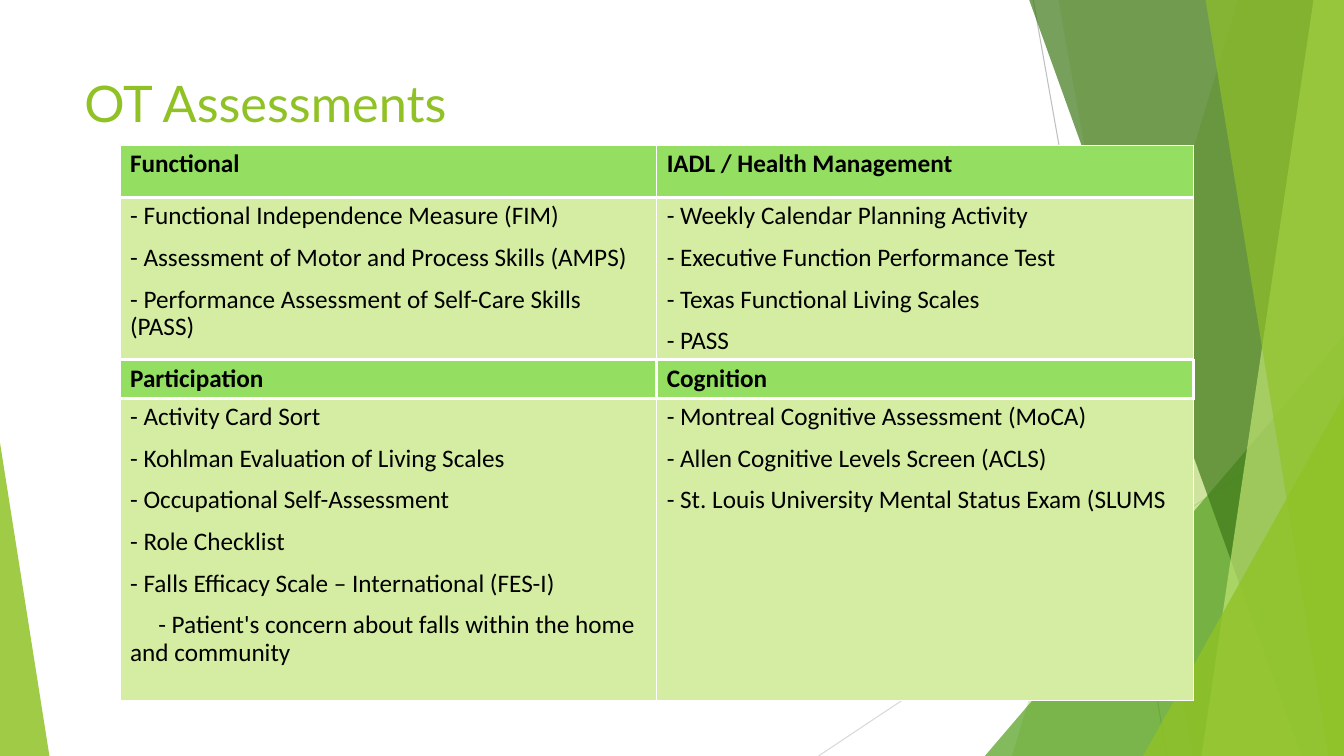
from dataclasses import dataclass

from lxml import etree
from pptx import Presentation
from pptx import util as u
from pptx.dml.color import RGBColor
from pptx.enum import shapes, text
from pptx.oxml import ns

LIME, GREEN, FOREST, PALE = "90C226", "54A021", "3F7819", "C0E474"
HEADING_FILL, LIST_FILL = "94DE61", "D5EDA2"
WHITE, BLACK = "FFFFFF", "000000"

deck = Presentation()
deck.slide_width, deck.slide_height = u.Inches(13.33), u.Inches(7.5)
page = deck.slides.add_slide(deck.slide_layouts[6])


@dataclass
class Ray:
    start: tuple[float, float]
    end: tuple[float, float]
    color: str


@dataclass
class Shard:
    """Full-height band from a slanted left edge to the right side."""
    top: float
    bottom: float
    color: str
    opacity: int


@dataclass
class Wedge:
    left: float
    top: float
    width: float
    peak: int
    color: str
    opacity: int


@dataclass
class Band:
    """Table row; borders run left, right, top, bottom in points."""
    height: float
    fill: str
    bold: bool
    borders: tuple[float, float, float, float]
    cells: tuple[list[str], list[str]]


# Lengths are percentages of the slide's width and height
def across(share: float) -> int:
    return round(deck.slide_width * share / 100)


def down(share: float) -> int:
    return round(deck.slide_height * share / 100)


def color_of(value: str) -> RGBColor:
    return RGBColor.from_string(value)


def paint(shape, color: str, opacity: int) -> None:
    shape.shadow.inherit = False
    shape.line.fill.background()
    shape.fill.solid()
    shape.fill.fore_color.rgb = color_of(color)
    tint = shape.fill._xPr.find(".//" + ns.qn("a:srgbClr"))
    etree.SubElement(tint, ns.qn("a:alpha"), val=str(opacity * 1000))


def draw_ray(ray: Ray) -> None:
    line = page.shapes.add_connector(
        shapes.MSO_CONNECTOR.STRAIGHT, across(ray.start[0]), down(ray.start[1]),
        across(ray.end[0]), down(ray.end[1]))
    line.line.color.rgb = color_of(ray.color)
    line.line.width = u.Pt(0.75)
    etree.SubElement(line._element.spPr, ns.qn("a:effectLst"))


def draw_shard(shard: Shard) -> None:
    outline = page.shapes.build_freeform(across(shard.top), 0)
    outline.add_line_segments([
        (across(100), 0), (across(100), down(100)), (across(shard.bottom), down(100))])
    paint(outline.convert_to_shape(), shard.color, shard.opacity)


def draw_wedge(wedge: Wedge) -> None:
    triangle = page.shapes.add_shape(
        shapes.MSO_SHAPE.ISOSCELES_TRIANGLE, across(wedge.left), down(wedge.top),
        across(wedge.width), down(100 - wedge.top))
    triangle.adjustments[0] = wedge.peak
    paint(triangle, wedge.color, wedge.opacity)


def draw_border(cell, side: str, width: float) -> None:
    edge = etree.SubElement(cell._tc.get_or_add_tcPr(), ns.qn("a:ln" + side),
                            w=str(u.Pt(width)))
    fill = etree.SubElement(edge, ns.qn("a:solidFill"))
    etree.SubElement(fill, ns.qn("a:srgbClr"), val=WHITE)


def style(para, font: str, size: int, color: str, bold: bool = False) -> None:
    for span in para.runs:
        span.font.name, span.font.size, span.font.bold = font, u.Pt(size), bold
        span.font.color.rgb = color_of(color)


def fill_cell(cell, lines: list[str], band: Band) -> None:
    for side, width in zip("LRTB", band.borders):
        draw_border(cell, side, width)
    cell.fill.solid()
    cell.fill.fore_color.rgb = color_of(band.fill)
    cell.text_frame.text = "\n".join(lines)
    for para in cell.text_frame.paragraphs:
        para.line_spacing, para.space_before = 0.9, u.Pt(10)
        style(para, "Calibri", 18, BLACK, band.bold)


# Background facets, back to front
FACETS = [
    Ray((76.88, 0), (86.85, 100), "BFBFBF"),
    Ray((100, 53.73), (60.9, 100), "D9D9D9"),
    Shard(92.1, 75.3, LIME, 30),
    Shard(78.75, 88.73, LIME, 20),
    Wedge(73.28, 44.4, 26.72, 1, GREEN, 72),
    Shard(76.58, 96.83, FOREST, 70),
    Shard(97.73, 89.4, PALE, 70),
    Shard(89.7, 98.85, LIME, 65),
    Wedge(85.05, 52.4, 14.95, 1, LIME, 80),
    Wedge(0, 58.53, 3.68, 0, LIME, 85),
]
PAINTERS = {Ray: draw_ray, Shard: draw_shard, Wedge: draw_wedge}
for facet in FACETS:
    PAINTERS[type(facet)](facet)

# Title
title = page.shapes.add_textbox(across(5.55), down(8.93), across(70.5), down(19.2))
title.text_frame.word_wrap = True
title.text_frame.vertical_anchor = text.MSO_ANCHOR.TOP
title.text_frame.text = "OT Assessments"
style(title.text_frame.paragraphs[0], "Lato", 36, LIME)

# Assessment table
BANDS = [
    Band(6.93, HEADING_FILL, True, (1, 1, 1, 3),
         (["Functional"], ["IADL / Health Management"])),
    Band(21.47, LIST_FILL, False, (1, 1, 1, 2.25), (
        ["- Functional Independence Measure (FIM)",
         "- Assessment of Motor and Process Skills (AMPS)",
         "- Performance Assessment of Self-Care Skills (PASS)"],
        ["- Weekly Calendar Planning Activity",
         "- Executive Function Performance Test",
         "- Texas Functional Living Scales",
         "- PASS"])),
    Band(5.07, HEADING_FILL, True, (2.25, 2.25, 2.25, 2.25),
         (["Participation"], ["Cognition"])),
    Band(40, LIST_FILL, False, (1, 1, 2.25, 1), (
        ["- Activity Card Sort",
         "- Kohlman Evaluation of Living Scales",
         "- Occupational Self-Assessment",
         "- Role Checklist",
         "- Falls Efficacy Scale – International (FES-I)",
         "- Patient's concern about falls within the home and community"],
        ["- Montreal Cognitive Assessment (MoCA)",
         "- Allen Cognitive Levels Screen (ACLS)",
         "- St. Louis University Mental Status Exam (SLUMS"])),
]
COLUMN = 39.93
table = page.shapes.add_table(
    len(BANDS), 2, across(8.93), down(19.2), across(2 * COLUMN),
    down(sum(band.height for band in BANDS))).table
for column in table.columns:
    column.width = across(COLUMN)
for row, band in zip(table.rows, BANDS):
    row.height = down(band.height)
    for cell, lines in zip(row.cells, band.cells):
        fill_cell(cell, lines, band)

# The sub-point under the falls scale starts further in
sub_point = table.cell(3, 0).text_frame.paragraphs[-1]
sub_point._p.get_or_add_pPr().set("indent", str(across(2.1)))

deck.save("out.pptx")
